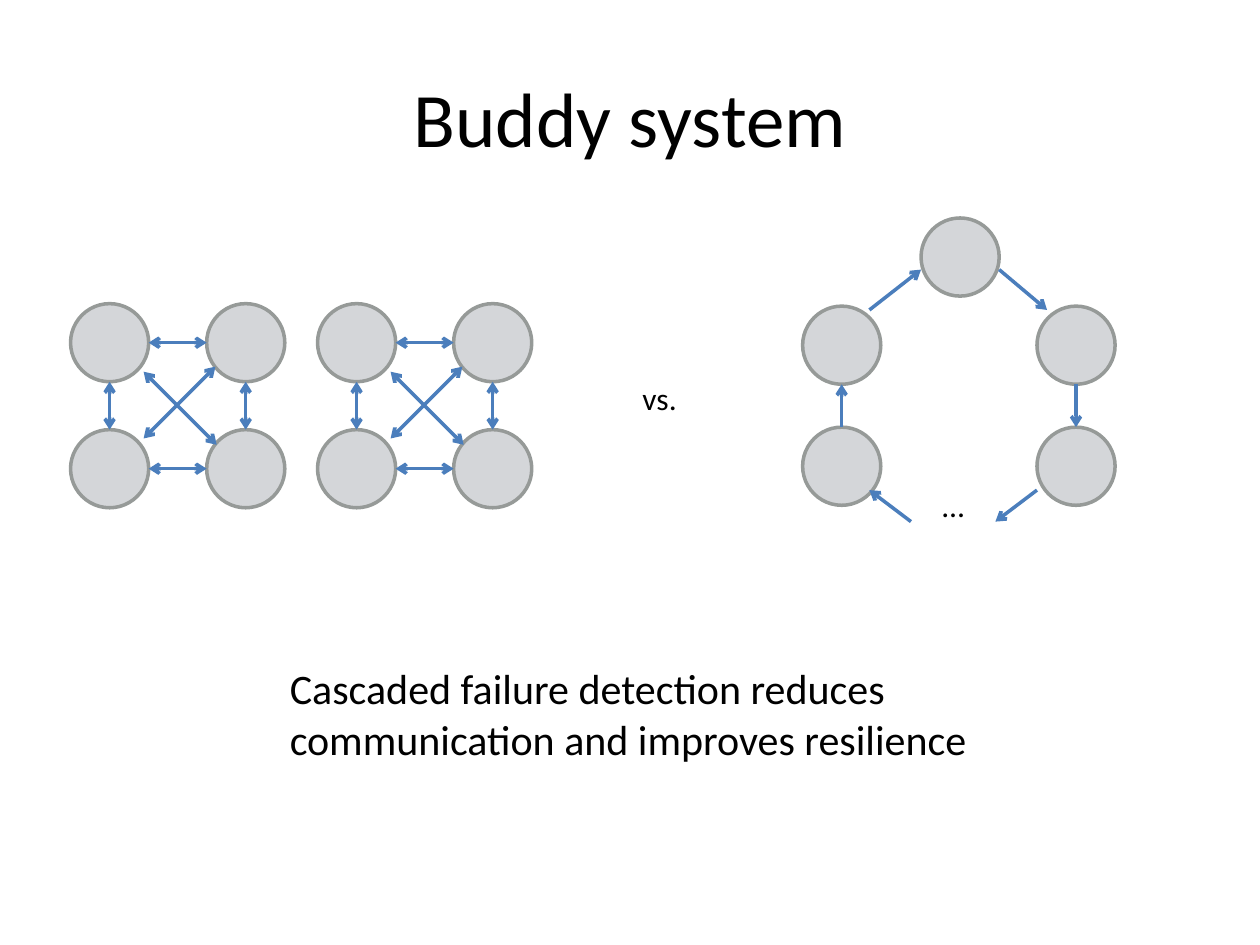
from pptx import Presentation
from pptx.dml.color import RGBColor
from pptx.enum.shapes import MSO_CONNECTOR, MSO_SHAPE
from pptx.enum.text import MSO_ANCHOR, PP_ALIGN
from pptx.oxml.ns import qn
from pptx.util import Inches, Pt
from lxml import etree

STRAIGHT = MSO_CONNECTOR.STRAIGHT
OVAL = MSO_SHAPE.OVAL
LEFT, CENTER = PP_ALIGN.LEFT, PP_ALIGN.CENTER
TOP, MIDDLE = MSO_ANCHOR.TOP, MSO_ANCHOR.MIDDLE

BLACK = RGBColor(0x00, 0x00, 0x00)
NODE_FILL = RGBColor(0xD4, 0xD6, 0xD9)
NODE_EDGE = RGBColor(0x96, 0x9A, 0x98)
ARROW_BLUE = RGBColor(0x4B, 0x7E, 0xBC)

FONT = "Calibri"
STROKE = Pt(2)
NODE = 0.62
RADIUS = NODE / 2


def add_text(shapes, text, left, top, width, height, *, size, align=LEFT,
             anchor=TOP, inset=(0.1, 0.05)):
    box = shapes.add_textbox(Inches(left), Inches(top), Inches(width), Inches(height))
    frame = box.text_frame
    frame.word_wrap = True
    frame.vertical_anchor = anchor
    frame.margin_left = frame.margin_right = Inches(inset[0])
    frame.margin_top = frame.margin_bottom = Inches(inset[1])
    paragraph = frame.paragraphs[0]
    paragraph.alignment = align
    run = paragraph.add_run()
    run.text = text
    run.font.name = FONT
    run.font.size = Pt(size)
    run.font.color.rgb = BLACK


def add_node(shapes, left, top):
    node = shapes.add_shape(OVAL, Inches(left), Inches(top), Inches(NODE), Inches(NODE))
    node.shadow.inherit = False
    node.fill.solid()
    node.fill.fore_color.rgb = NODE_FILL
    node.line.color.rgb = NODE_EDGE
    node.line.width = STROKE


def add_arrow(shapes, left, top, start, end, both_ways=False):
    arrow = shapes.add_connector(
        STRAIGHT, Inches(left + start[0]), Inches(top + start[1]),
        Inches(left + end[0]), Inches(top + end[1]))
    arrow.line.color.rgb = ARROW_BLUE
    arrow.line.width = STROKE
    properties = arrow._element.spPr
    outline = properties.find(qn("a:ln"))
    for tag in ("a:headEnd", "a:tailEnd") if both_ways else ("a:tailEnd",):
        etree.SubElement(outline, qn(tag)).set("type", "arrow")
    etree.SubElement(properties, qn("a:effectLst"))


def add_mesh(slide, left, top, width, height):
    shapes = slide.shapes.add_group_shape().shapes
    right, bottom = width - NODE, height - NODE
    for x in (0, right):
        for y in (0, bottom):
            add_node(shapes, left + x, top + y)
    links = [((NODE, y + RADIUS), (right, y + RADIUS)) for y in (0, bottom)]
    links += [((x + RADIUS, NODE), (x + RADIUS, bottom)) for x in (0, right)]
    links += [
        ((0.58, bottom + 0.07), (right + 0.07, 0.5)),
        ((0.58, 0.54), (right + 0.08, bottom + 0.12)),
    ]
    for start, end in links:
        add_arrow(shapes, left, top, start, end, both_ways=True)


def add_ring(slide, left, top, width, height):
    shapes = slide.shapes.add_group_shape().shapes
    right, apex = width - NODE, 0.94
    upper, lower = 0.7, 1.66
    for x, y in ((0, upper), (apex, 0), (right, upper), (right, lower), (0, lower)):
        add_node(shapes, left + x, top + y)
    add_text(shapes, "…", left + 0.86, top + 2.08, 0.67, 0.4, size=18, align=CENTER)
    links = [
        ((0.53, 0.73), (apex, 0.41)),
        ((apex + NODE, 0.41), (right + 0.08, 0.73)),
        ((right + RADIUS, upper + NODE), (right + RADIUS, lower)),
        ((right, 2.16), (1.53, height)),
        ((0.86, height), (0.53, 2.16)),
        ((RADIUS, lower), (RADIUS, upper + NODE)),
    ]
    for start, end in links:
        add_arrow(shapes, left, top, start, end)


def main():
    deck = Presentation()
    deck.slide_width, deck.slide_height = Inches(10), Inches(7.5)
    slide = deck.slides.add_slide(deck.slide_layouts[6])
    add_text(slide.shapes, "Buddy system", 0.5, 0.3, 9, 1.25,
             size=44, align=CENTER, anchor=MIDDLE)
    add_text(slide.shapes,
             "Cascaded failure detection reduces communication and improves resilience",
             2.3, 4.82, 6.17, 1.68, size=24, anchor=MIDDLE, inset=(0, 0))
    for left in (0.56, 2.52):
        add_mesh(slide, left, 2.41, 1.7, 1.62)
    add_ring(slide, 6.37, 1.73, 2.48, 2.41)
    add_text(slide.shapes, "vs.", 5, 2.96, 0.92, 0.4, size=18)
    deck.save("out.pptx")


if __name__ == "__main__":
    main()
